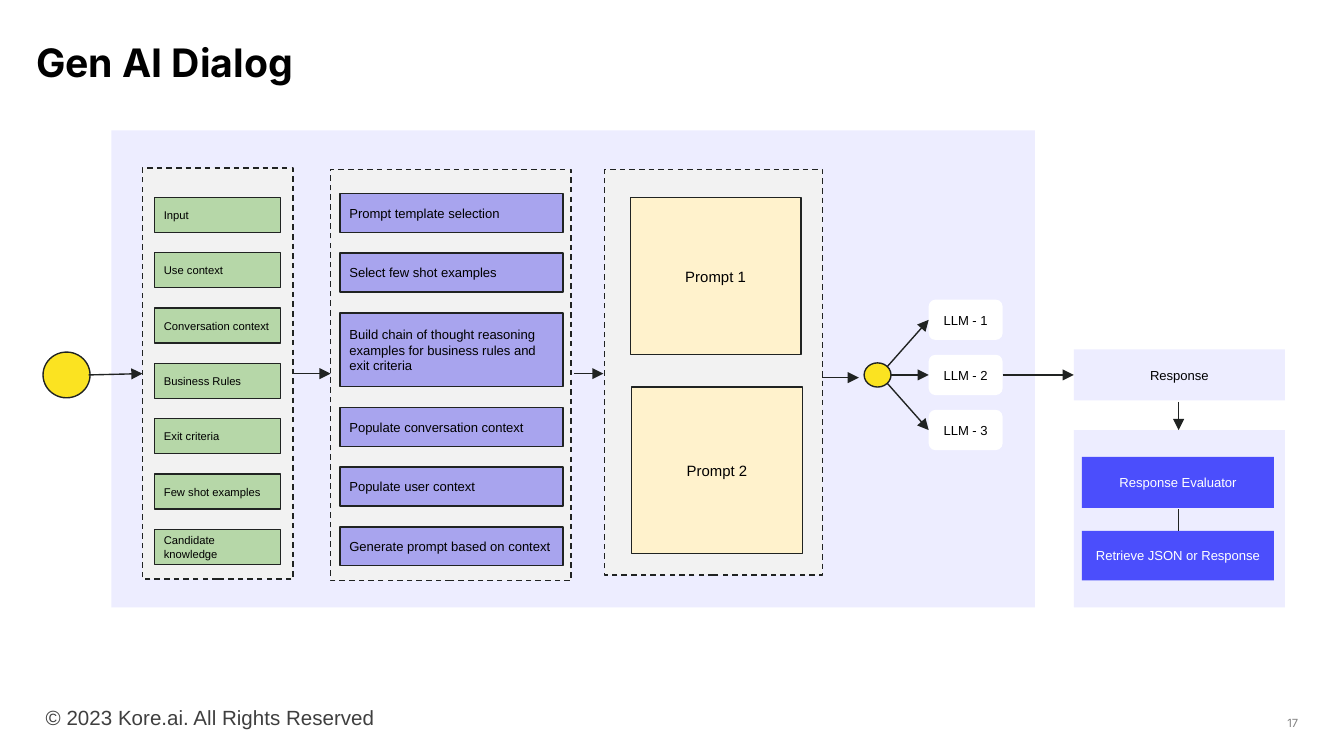
from dataclasses import dataclass
from typing import Optional

from lxml import etree
from pptx import Presentation
from pptx import util as u
from pptx.dml.color import RGBColor
from pptx.enum import dml, shapes, text
from pptx.oxml.ns import qn

COLORS = {
    "black": "000000", "white": "FFFFFF", "ink": "202322",
    "lavender": "EDEDFF", "panel": "F2F2F2", "green": "B6D7A8",
    "purple": "A8A4EE", "cream": "FFF2CC", "blue": "4B4EFC",
    "yellow": "FBE321", "footer": "3F3F3F", "number": "7F7F7F",
}
KINDS = shapes.MSO_SHAPE
ALIGN = text.PP_ALIGN
ANCHOR = text.MSO_ANCHOR
LINE_WIDTH = u.Pt(0.75)


@dataclass
class Box:
    left: float
    top: float
    width: float
    height: float
    fill: str
    label: str = ""
    size: float = 7
    color: str = "black"
    align: ALIGN = ALIGN.CENTER
    outlined: bool = False
    dashed: bool = False
    kind: KINDS = KINDS.RECTANGLE
    inset: float = 0.07


@dataclass
class Caption:
    left: float
    top: float
    width: float
    height: float
    label: str
    size: float
    font: str
    color: str
    align: ALIGN = ALIGN.LEFT
    anchor: ANCHOR = ANCHOR.BOTTOM
    inset_x: float = 0.07
    inset_y: float = 0.04
    bold: bool = False
    spacing: Optional[float] = None


@dataclass
class Link:
    x1: float
    y1: float
    x2: float
    y2: float
    arrow: bool = True


def rgb(name: str) -> RGBColor:
    return RGBColor.from_string(COLORS[name])


def write(frame, label: str, size: float, font: str, color: str, align: ALIGN,
          anchor: ANCHOR, inset_x: float, inset_y: float, bold: bool = False):
    """Fill a text frame with one formatted paragraph and return it."""
    frame.word_wrap = True
    frame.vertical_anchor = anchor
    frame.margin_left = frame.margin_right = u.Inches(inset_x)
    frame.margin_top = frame.margin_bottom = u.Inches(inset_y)
    frame.text = label
    para = frame.paragraphs[0]
    para.alignment = align
    span = para.runs[0]
    span.font.name, span.font.size, span.font.bold = font, u.Pt(size), bold
    span.font.color.rgb = rgb(color)
    return para


def draw_box(parent, box: Box) -> None:
    """Draw a box on a page or inside a group."""
    shape = parent.shapes.add_shape(
        box.kind, u.Inches(box.left), u.Inches(box.top),
        u.Inches(box.width), u.Inches(box.height))
    shape.shadow.inherit = False
    shape.fill.solid()
    shape.fill.fore_color.rgb = rgb(box.fill)
    if box.outlined:
        shape.line.color.rgb = rgb("ink")
        shape.line.width = LINE_WIDTH
    else:
        shape.line.fill.background()
    if box.dashed:
        shape.line.dash_style = dml.MSO_LINE.DASH
    if box.label:
        write(shape.text_frame, box.label, box.size, "Arial", box.color,
              box.align, ANCHOR.MIDDLE, box.inset, box.inset)


def draw_caption(page, caption: Caption) -> None:
    box = page.shapes.add_textbox(
        u.Inches(caption.left), u.Inches(caption.top),
        u.Inches(caption.width), u.Inches(caption.height))
    para = write(box.text_frame, caption.label, caption.size, caption.font,
                 caption.color, caption.align, caption.anchor,
                 caption.inset_x, caption.inset_y, caption.bold)
    if caption.spacing:
        para.line_spacing = caption.spacing


def draw_link(page, link: Link) -> None:
    line = page.shapes.add_connector(
        shapes.MSO_CONNECTOR.STRAIGHT, u.Inches(link.x1), u.Inches(link.y1),
        u.Inches(link.x2), u.Inches(link.y2))
    line.line.color.rgb = rgb("ink")
    line.line.width = LINE_WIDTH
    properties = line.element.spPr
    if link.arrow:
        etree.SubElement(properties.find(qn("a:ln")), qn("a:tailEnd"), type="triangle")
    etree.SubElement(properties, qn("a:effectLst"))


def panel(left: float, top: float, width: float, height: float) -> Box:
    return Box(left, top, width, height, "panel", outlined=True, dashed=True)


def column(left: float, top: float, bottom: float, width: float,
           items: list[tuple[str, float]], fill: str, size: float) -> list[Box]:
    """Stack labelled boxes with equal gaps between top and bottom."""
    gap = (bottom - top - sum(height for _, height in items)) / (len(items) - 1)
    boxes = []
    for label, height in items:
        boxes.append(Box(left, top, width, height, fill, label, size,
                         align=ALIGN.LEFT, outlined=True))
        top += height + gap
    return boxes


INPUTS = ["Input", "Use context", "Conversation context", "Business Rules",
          "Exit criteria", "Few shot examples", "Candidate knowledge"]
STEPS = [
    ("Prompt template selection", 0.29),
    ("Select few shot examples", 0.29),
    ("Build chain of thought reasoning examples for business rules and exit criteria", 0.55),
    ("Populate conversation context", 0.29),
    ("Populate user context", 0.29),
    ("Generate prompt based on context", 0.29),
]

BOXES = [
    # Background areas
    Box(0.83, 0.97, 6.87, 3.55, "lavender"),
    Box(7.99, 3.2, 1.57, 1.32, "lavender"),
    # Prompts
    panel(4.5, 1.26, 1.62, 3.02),
    Box(4.69, 1.47, 1.27, 1.17, "cream", "Prompt 1", 8, outlined=True),
    Box(4.7, 2.88, 1.27, 1.24, "cream", "Prompt 2", 8, outlined=True),
    # Inputs
    panel(1.06, 1.25, 1.12, 3.06),
    *column(1.15, 1.47, 4.2, 0.94, [(name, 0.26) for name in INPUTS], "green", 6),
    # Start and branching nodes
    Box(0.32, 2.62, 0.35, 0.34, "yellow", outlined=True, kind=KINDS.OVAL),
    Box(6.43, 2.7, 0.2, 0.18, "yellow", outlined=True, kind=KINDS.OVAL),
    # Language models
    *[Box(6.91, 2.23 + 0.41 * i, 0.55, 0.3, "white", f"LLM - {i + 1}",
          kind=KINDS.ROUNDED_RECTANGLE) for i in range(3)],
    # Response handling
    Box(7.99, 2.6, 1.57, 0.38, "lavender", "Response"),
    Box(8.05, 3.4, 1.43, 0.38, "blue", "Response Evaluator", color="white"),
    Box(8.05, 3.95, 1.43, 0.37, "blue", "Retrieve JSON or Response",
        color="white", inset=0.1),
]

# Prompt building steps, kept together as a group
STEP_BOXES = [panel(2.46, 1.26, 1.79, 3.06),
              *column(2.53, 1.44, 4.21, 1.66, STEPS, "purple", 7)]

LINKS = [
    Link(0.66, 2.79, 1.06, 2.78), Link(2.18, 2.78, 2.46, 2.78),
    Link(4.27, 2.78, 4.49, 2.78), Link(6.12, 2.81, 6.39, 2.81),
    Link(6.6, 2.73, 6.91, 2.38), Link(6.63, 2.79, 6.91, 2.79),
    Link(6.6, 2.85, 6.91, 3.2), Link(7.46, 2.79, 7.99, 2.79),
    Link(8.77, 2.99, 8.77, 3.2), Link(8.77, 3.79, 8.77, 3.95, arrow=False),
]

CAPTIONS = [
    Caption(0.17, 0.13, 8.19, 0.44, "Gen AI Dialog", 21, "Inter", "black",
            anchor=ANCHOR.TOP, inset_x=0.1, inset_y=0.1, bold=True, spacing=1.15),
    Caption(0.27, 5.25, 3.09, 0.22, "© 2023 Kore.ai. All Rights Reserved",
            11, "Arial", "footer"),
    Caption(8.98, 5.25, 0.75, 0.22, "17", 6, "Inter", "number", ALIGN.RIGHT),
]


def main() -> None:
    deck = Presentation()
    deck.slide_width = u.Inches(10)
    deck.slide_height = u.Inches(10 * 9 / 16)
    page = deck.slides.add_slide(deck.slide_layouts[6])
    for box in BOXES:
        draw_box(page, box)
    steps = page.shapes.add_group_shape()
    for box in STEP_BOXES:
        draw_box(steps, box)
    for link in LINKS:
        draw_link(page, link)
    for caption in CAPTIONS:
        draw_caption(page, caption)
    deck.save("out.pptx")


if __name__ == "__main__":
    main()
